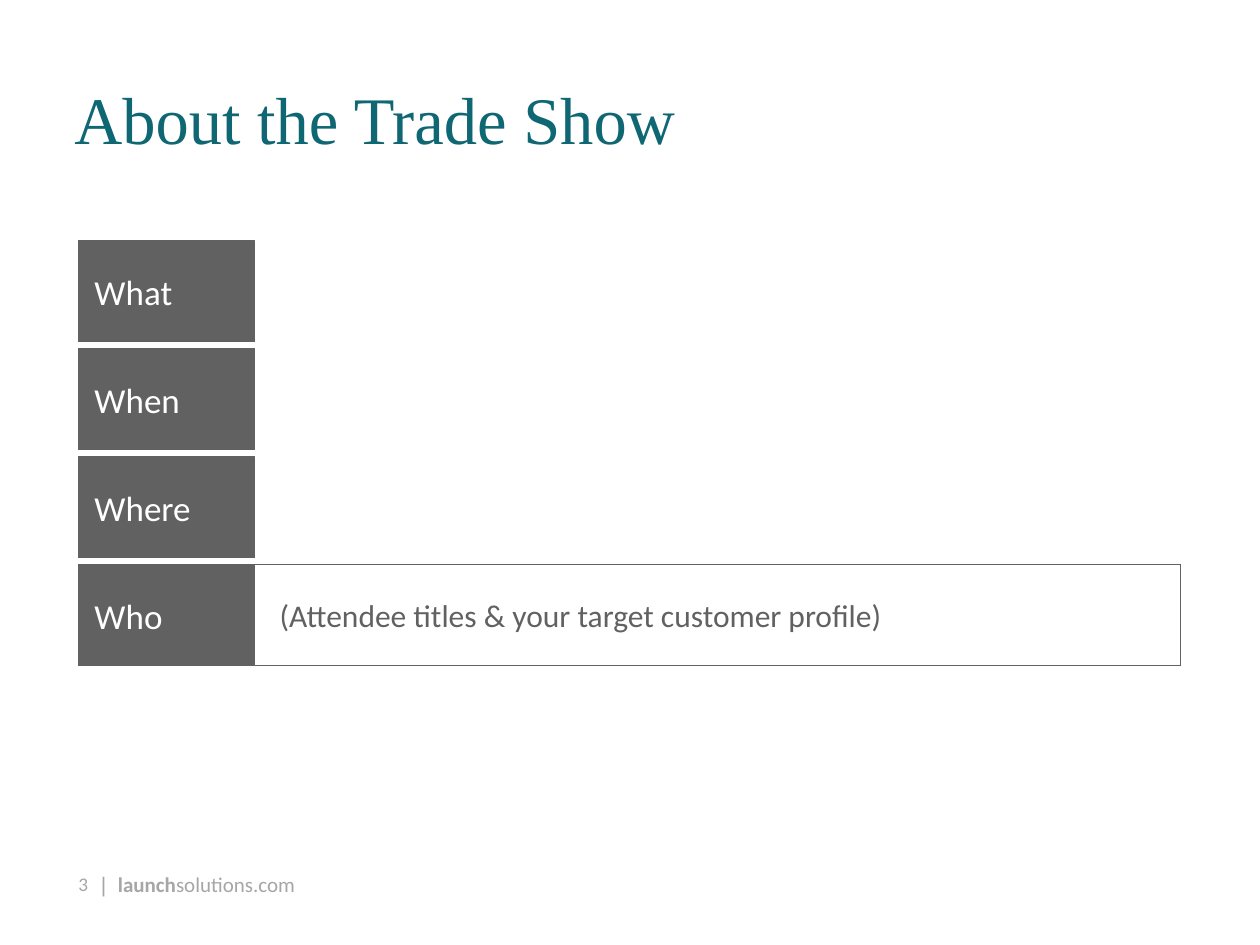
from pptx import Presentation
from pptx.dml.color import RGBColor
from pptx.enum import dml, shapes, text
from pptx.util import Inches, Pt

HUES = {"teal": "0F6773", "dark": "616161", "pale": "A6A6A6", "white": "FFFFFF"}


def style(run, size, hue, face="Calibri", bold=False):
    run.font.size = Pt(size)
    run.font.name = face
    run.font.bold = bold
    run.font.color.rgb = RGBColor.from_string(HUES[hue])


def setup(shape, anchor, left=0, wrap=True):
    frame = shape.text_frame
    frame.word_wrap = wrap
    frame.vertical_anchor = anchor
    frame.margin_left = Inches(left)
    frame.margin_top = frame.margin_right = frame.margin_bottom = 0
    return frame.paragraphs[0]


deck = Presentation()
deck.slide_width, deck.slide_height = Inches(10), Inches(7.5)
slide = deck.slides.add_slide(deck.slide_layouts[6])
bottom = text.MSO_ANCHOR.BOTTOM

title = slide.shapes.add_textbox(Inches(0.59), 0, Inches(8.75), Inches(1.25))
para = setup(title, bottom)
para.text = "About the Trade Show"
style(para.runs[0], 38, "teal", "Times New Roman")

left, top, width, height, step = 0.62, 1.91, 1.4, 0.8, 0.857
labels = ["What", "When", "Where", "Who"]
cells = [(left, top + i * step, width, label, 0.13, 20, "dark", "white")
         for i, label in enumerate(labels)]
cells.append((left + width, top + 3 * step, 7.35,
              "(Attendee titles & your target customer profile)",
              0.2, 18, "white", "dark"))

for x, y, w, words, inset, size, fill, ink in cells:
    box = slide.shapes.add_shape(shapes.MSO_SHAPE.RECTANGLE, Inches(x), Inches(y),
                                 Inches(w), Inches(height))
    box.shadow.inherit = False
    box.fill.solid()
    box.fill.fore_color.rgb = RGBColor.from_string(HUES[fill])
    box.line.color.rgb = RGBColor.from_string(HUES["dark"])
    box.line.width = Pt(0.25)
    box.line.dash_style = dml.MSO_LINE.ROUND_DOT
    para = setup(box, text.MSO_ANCHOR.MIDDLE, inset)
    para.text = words
    para.alignment = text.PP_ALIGN.LEFT
    para.space_after = Pt(6)
    style(para.runs[0], size, ink)

page = slide.shapes.add_textbox(Inches(0.08), Inches(6.71), Inches(0.62), Inches(0.4))
para = setup(page, bottom)
para.text = "3"
para.alignment = text.PP_ALIGN.RIGHT
style(para.runs[0], 11, "pale")

site = slide.shapes.add_textbox(Inches(0.8), Inches(6.92), Inches(1.55), Inches(0.2))
para = setup(site, bottom, wrap=False)
site.text_frame.auto_size = text.MSO_AUTO_SIZE.SHAPE_TO_FIT_TEXT
for words, face, bold in [("|  ", "Arial", False), ("launch", "Calibri", True),
                          ("solutions.com", "Calibri", False)]:
    run = para.add_run()
    run.text = words
    style(run, 12, "pale", face, bold)

deck.save("out.pptx")
